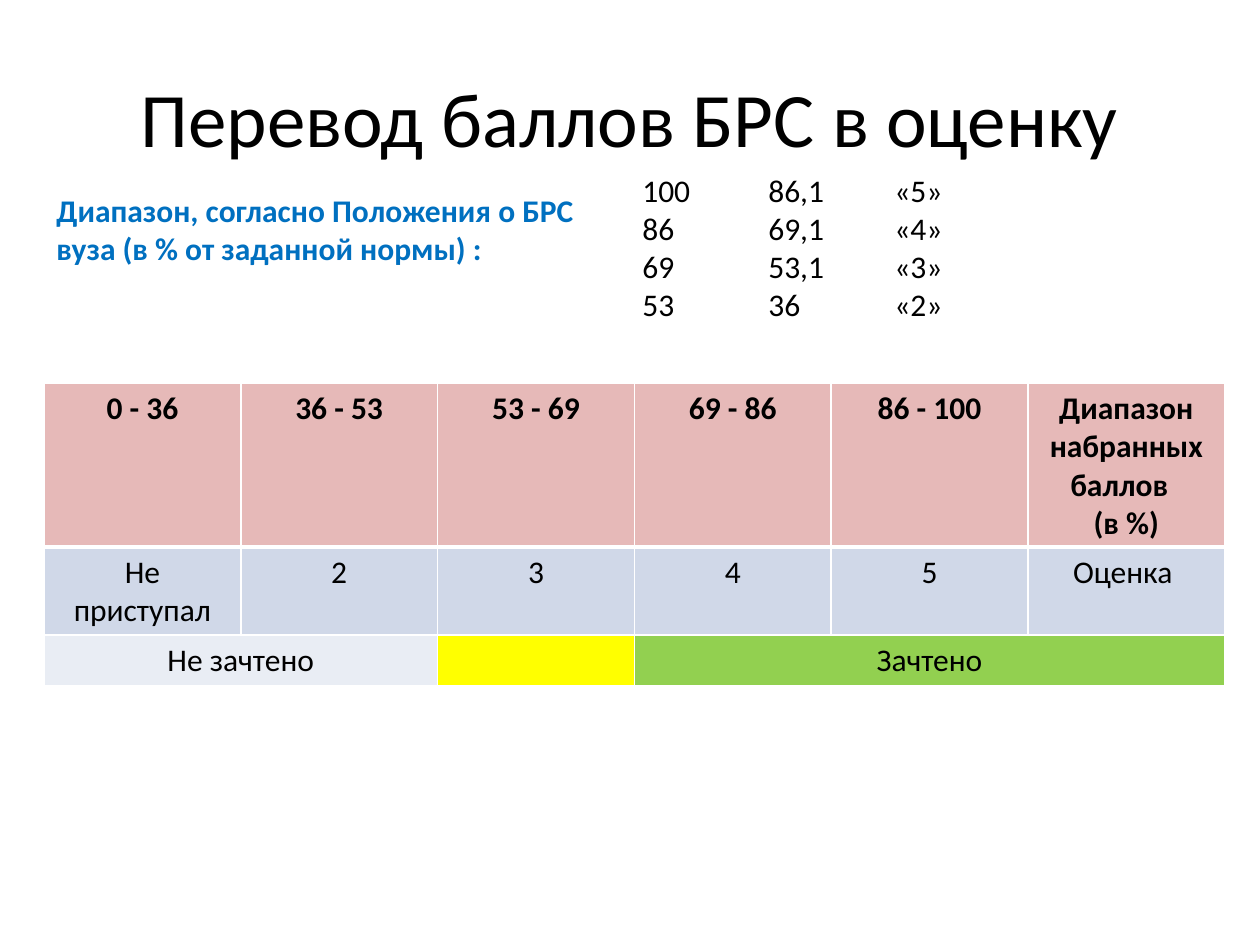
from dataclasses import dataclass

from lxml import etree
from pptx import Presentation
from pptx.dml.color import RGBColor
from pptx.enum.text import MSO_ANCHOR, PP_ALIGN
from pptx.oxml.ns import qn
from pptx.util import Emu, Pt

LEFT, CENTER = PP_ALIGN.LEFT, PP_ALIGN.CENTER
TOP, MIDDLE = MSO_ANCHOR.TOP, MSO_ANCHOR.MIDDLE
EMU_PER_PX = 914400 / 126


@dataclass(frozen=True)
class Theme:
    """Colours and type sizes of the slide."""
    font: str = "Calibri"
    title_size: int = 44
    body_size: int = 18
    text: str = "000000"
    accent: str = "0070C0"
    border: str = "FFFFFF"
    header: str = "E6B9B8"
    grade: str = "D0D8E8"
    failed: str = "E9EDF4"
    borderline: str = "FFFF00"
    passed: str = "92D050"


THEME = Theme()

RANGES = ["100\t86,1\t«5»", "86\t69,1\t«4»", "69\t53,1\t«3»", "53\t36\t«2»"]
RANGE_TABS = (126, 252)
HEADERS = ["0 - 36", "36 - 53", "53 - 69", "69 - 86", "86 - 100",
           "Диапазон набранных баллов  \n(в %)"]
GRADES = ["Не приступал", "2", "3", "4", "5", "Оценка "]
RESULTS = [(0, 1, "Не зачтено", THEME.failed),
           (2, 2, "", THEME.borderline),
           (3, 5, "Зачтено", THEME.passed)]


def px(length):
    """Turn pixels into EMU."""
    return Emu(round(length * EMU_PER_PX))


def set_tabs(paragraph, tabs):
    """Give a paragraph left-aligned tab stops."""
    tab_list = etree.SubElement(paragraph._p.get_or_add_pPr(), qn("a:tabLst"))
    for position in tabs:
        etree.SubElement(tab_list, qn("a:tab"), pos=str(px(position)), algn="l")


def write_text(frame, text, size=THEME.body_size, color=THEME.text, bold=False,
               align=LEFT, tabs=()):
    """Fill a text frame with evenly styled paragraphs."""
    frame.text = text
    for paragraph in frame.paragraphs:
        paragraph.alignment = align
        if tabs:
            set_tabs(paragraph, tabs)
        font = paragraph.font
        font.name, font.size, font.bold = THEME.font, Pt(size), bold
        font.color.rgb = RGBColor.from_string(color)


def add_text(slide, left, top, width, height, text, anchor=TOP, **style):
    """Add a wrapping text box."""
    frame = slide.shapes.add_textbox(px(left), px(top), px(width), px(height)).text_frame
    frame.word_wrap = True
    frame.vertical_anchor = anchor
    write_text(frame, text, **style)


def set_borders(cell, bottom_width):
    """Draw the cell's four borders, with a chosen width below."""
    properties = cell._tc.get_or_add_tcPr()
    for side, width in (("L", 1), ("R", 1), ("T", 1), ("B", bottom_width)):
        line = etree.SubElement(properties, qn(f"a:ln{side}"), w=str(Pt(width)))
        fill = etree.SubElement(line, qn("a:solidFill"))
        etree.SubElement(fill, qn("a:srgbClr"), val=THEME.border)


def style_cell(cell, fill, text="", bold=False, bottom_width=1):
    """Set the borders, fill and text of a cell."""
    set_borders(cell, bottom_width)
    cell.fill.solid()
    cell.fill.fore_color.rgb = RGBColor.from_string(fill)
    write_text(cell.text_frame, text, bold=bold, align=CENTER)


def add_grade_table(slide, left, top, width, height, row_height):
    """Add the table that turns score ranges into grades."""
    shape = slide.shapes.add_table(3, len(HEADERS), px(left), px(top), px(width), px(height))
    table = shape.table
    for row in table.rows:
        row.height = px(row_height)
    shape.height = px(height)
    for column, (header, grade) in enumerate(zip(HEADERS, GRADES)):
        style_cell(table.cell(0, column), THEME.header, header, bold=True, bottom_width=3)
        style_cell(table.cell(1, column), THEME.grade, grade)
    for first, last, text, fill in RESULTS:
        for column in range(first, last + 1):
            style_cell(table.cell(2, column), fill)
        if last > first:
            table.cell(2, first).merge(table.cell(2, last))
        write_text(table.cell(2, first).text_frame, text, align=CENTER)


def main():
    """Build and save the slide."""
    presentation = Presentation()
    presentation.slide_width, presentation.slide_height = px(1260), px(945)
    slide = presentation.slides.add_slide(presentation.slide_layouts[6])
    add_text(slide, 63, 38, 1134, 157, "Перевод баллов БРС в оценку",
             anchor=MIDDLE, size=THEME.title_size, align=CENTER)
    add_text(slide, 630, 165, 630, 165, "\n".join(RANGES), tabs=RANGE_TABS)
    add_grade_table(slide, 44, 383, 1181, 304, 51)
    add_text(slide, 44, 185, 556, 89,
             "Диапазон, согласно Положения о БРС вуза (в % от заданной нормы) :",
             color=THEME.accent, bold=True)
    presentation.save("out.pptx")


if __name__ == "__main__":
    main()
